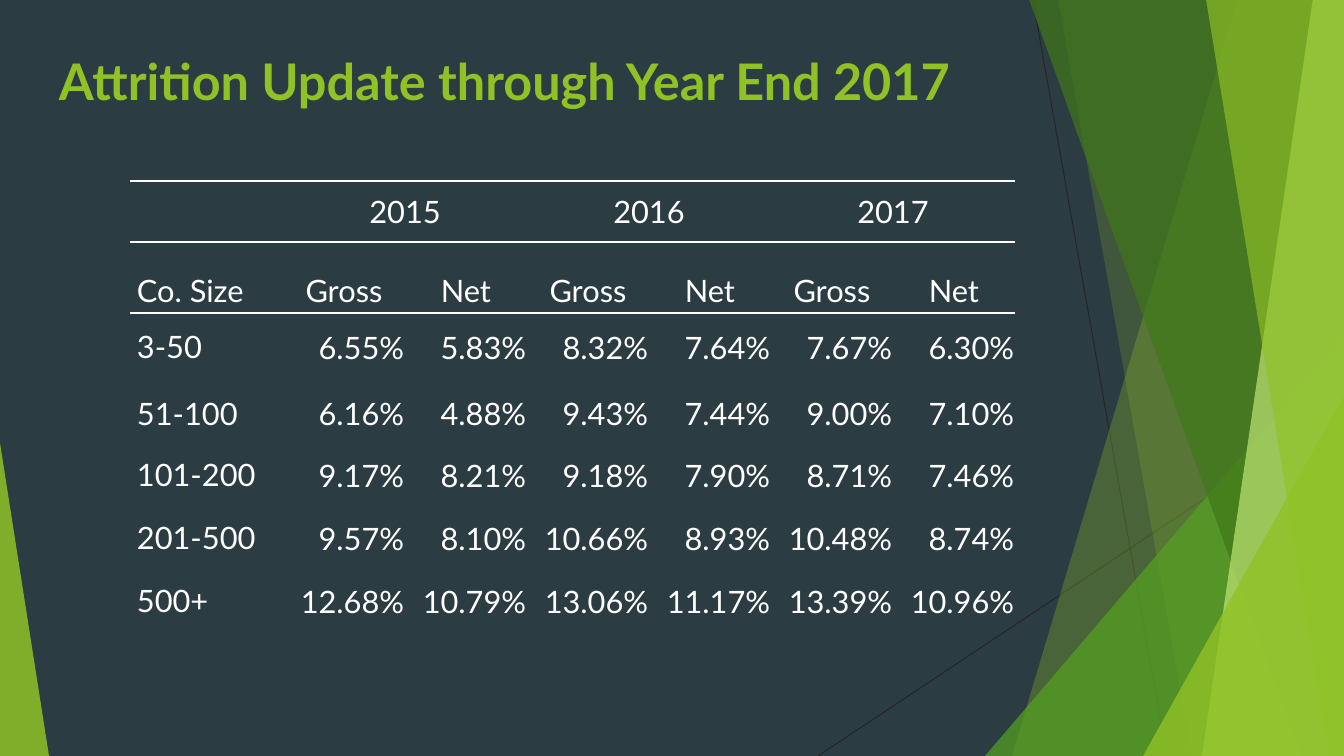
from dataclasses import dataclass

from lxml import etree
from pptx import Presentation
from pptx.dml.color import RGBColor
from pptx.enum.shapes import MSO_CONNECTOR, MSO_SHAPE
from pptx.enum.text import MSO_ANCHOR, PP_ALIGN
from pptx.oxml.ns import qn
from pptx.util import Pt

PX = 914400 / 100.8
WIDTH, HEIGHT = 1344, 756
LEFT, CENTER, RIGHT = PP_ALIGN.LEFT, PP_ALIGN.CENTER, PP_ALIGN.RIGHT
TOP, MIDDLE, BOTTOM = MSO_ANCHOR.TOP, MSO_ANCHOR.MIDDLE, MSO_ANCHOR.BOTTOM
TRIANGLE = MSO_SHAPE.ISOSCELES_TRIANGLE
STRAIGHT = MSO_CONNECTOR.STRAIGHT


@dataclass(frozen=True)
class Theme:
    background: str = "2C3C43"
    lime: str = "90C226"
    green: str = "54A021"
    forest: str = "3F7819"
    pale: str = "C0E474"
    hairline: str = "262626"
    white: str = "FFFFFF"
    font: str = "Lato"
    title_size: float = 36
    table_size: float = 22
    hairline_width: float = 0.75
    rule_width: float = 1


THEME = Theme()

RAYS = [((1033, 0), (1167, HEIGHT)), ((WIDTH, 406), (818, HEIGHT))]
# Facets, back to front: band = (top x, bottom x), triangle = (box, apex)
FACETS = [
    ("band", (1238, 1012), THEME.lime, 30),
    ("band", (1058, 1192), THEME.lime, 20),
    ("triangle", ((985, 336, 359, 420), 1), THEME.green, 72),
    ("band", (1029, 1301), THEME.forest, 70),
    ("band", (1313, 1202), THEME.pale, 70),
    ("band", (1206, 1329), THEME.lime, 65),
    ("triangle", ((1143, 396, 201, 360), 1), THEME.lime, 80),
    ("triangle", ((0, 443, 49, 313), 0), THEME.lime, 85),
]

YEARS = ["2015", "2016", "2017"]
ATTRITION = [
    ("3-50", "6.55%", "5.83%", "8.32%", "7.64%", "7.67%", "6.30%"),
    ("51-100", "6.16%", "4.88%", "9.43%", "7.44%", "9.00%", "7.10%"),
    ("101-200", "9.17%", "8.21%", "9.18%", "7.90%", "8.71%", "7.46%"),
    ("201-500", "9.57%", "8.10%", "10.66%", "8.93%", "10.48%", "8.74%"),
    ("500+", "12.68%", "10.79%", "13.06%", "11.17%", "13.39%", "10.96%"),
]
COL_WIDTHS = [153] + [122] * 6
ROW_HEIGHTS = [61, 71, 68, 65, 58, 68, 58]
RULED_EDGES = {0, 1, 2}
LABEL_INSETS = (7, 4, 7, 4)
FIGURE_INSETS = (1, 1, 1, 0)


def emu(px):
    return round(px * PX)


def set_attrs(obj, values):
    for name, value in values.items():
        setattr(obj, name, value)


class SlideBuilder:
    def __init__(self, prs, theme):
        self.theme = theme
        self.slide = prs.slides.add_slide(prs.slide_layouts[6])
        self.shapes = self.slide.shapes
        fill = self.slide.background.fill
        fill.solid()
        fill.fore_color.rgb = RGBColor.from_string(theme.background)

    def line(self, start, end):
        sp = self.shapes.add_connector(STRAIGHT, *map(emu, start + end))
        sp.line.width = Pt(self.theme.hairline_width)
        sp.line.color.rgb = RGBColor.from_string(self.theme.hairline)
        etree.SubElement(sp._element.spPr, qn("a:effectLst"))

    def paint(self, sp, color, opacity):
        """Fill with a colour at a percentage of opacity, without outline or shadow."""
        sp.shadow.inherit = False
        sp.line.fill.background()
        sp.fill.solid()
        sp.fill.fore_color.rgb = RGBColor.from_string(color)
        clr = sp._element.spPr.find(".//" + qn("a:srgbClr"))
        etree.SubElement(clr, qn("a:alpha"), val=str(opacity * 1000))

    def band(self, edge, color, opacity):
        """Draw from a slanted left edge to the right side of the slide."""
        top_x, bottom_x = edge
        builder = self.shapes.build_freeform(top_x, -1, scale=PX)
        builder.add_line_segments([(WIDTH, -1), (WIDTH, HEIGHT), (bottom_x, HEIGHT)])
        self.paint(builder.convert_to_shape(), color, opacity)

    def triangle(self, geometry, color, opacity):
        box, apex = geometry
        sp = self.shapes.add_shape(TRIANGLE, *map(emu, box))
        sp.adjustments[0] = apex
        self.paint(sp, color, opacity)

    def text(self, tf, words, size, color, align=LEFT, bold=False):
        p = tf.paragraphs[0]
        p.alignment = align
        r = p.add_run()
        r.text = words
        set_attrs(r.font, {"name": self.theme.font, "size": Pt(size), "bold": bold})
        r.font.color.rgb = RGBColor.from_string(color)

    def title(self, box, words):
        tf = self.shapes.add_textbox(*map(emu, box)).text_frame
        set_attrs(tf, {"word_wrap": True, "vertical_anchor": TOP})
        self.text(tf, words, self.theme.title_size, self.theme.lime, bold=True)

    def table(self, x, y, col_widths, row_heights):
        frame = self.shapes.add_table(
            len(row_heights), len(col_widths),
            *map(emu, (x, y, sum(col_widths), sum(row_heights))))
        table = frame.table
        set_attrs(table, {"first_row": False, "horz_banding": False})
        for col, width in zip(table.columns, col_widths):
            col.width = emu(width)
        for i, (row, height) in enumerate(zip(table.rows, row_heights)):
            row.height = emu(height)
            for cell in row.cells:
                cell.fill.background()
                self.borders(cell, i in RULED_EDGES, i + 1 in RULED_EDGES)
        return table

    def borders(self, cell, top, bottom):
        tc_pr = cell._tc.get_or_add_tcPr()
        sides = {"lnL": False, "lnR": False, "lnT": top, "lnB": bottom}
        for i, (side, ruled) in enumerate(sides.items()):
            ln = etree.Element(qn("a:" + side), w=str(Pt(self.theme.rule_width)))
            if ruled:
                fill = etree.SubElement(ln, qn("a:solidFill"))
                etree.SubElement(fill, qn("a:srgbClr"), val=self.theme.white)
            else:
                etree.SubElement(ln, qn("a:noFill"))
            tc_pr.insert(i, ln)

    def cell(self, cell, words, align=LEFT, anchor=MIDDLE, insets=LABEL_INSETS):
        sides = ("margin_left", "margin_top", "margin_right", "margin_bottom")
        set_attrs(cell, dict(zip(sides, map(emu, insets))))
        cell.vertical_anchor = anchor
        self.text(cell.text_frame, words, self.theme.table_size, self.theme.white, align)


def add_attrition_table(s):
    table = s.table(130, 181, COL_WIDTHS, ROW_HEIGHTS)
    for i, year in enumerate(YEARS):
        first = table.cell(0, 1 + 2 * i)
        first.merge(table.cell(0, 2 + 2 * i))
        s.cell(first, year, CENTER)
    for col, heading in enumerate(["Co. Size"] + ["Gross", "Net"] * len(YEARS)):
        s.cell(table.cell(1, col), heading, CENTER if col else LEFT, BOTTOM)
    for row, (size, *rates) in enumerate(ATTRITION, start=2):
        s.cell(table.cell(row, 0), size)
        for col, rate in enumerate(rates, start=1):
            s.cell(table.cell(row, col), rate, RIGHT, insets=FIGURE_INSETS)


def main():
    prs = Presentation()
    set_attrs(prs, {"slide_width": emu(WIDTH), "slide_height": emu(HEIGHT)})
    s = SlideBuilder(prs, THEME)
    for start, end in RAYS:
        s.line(start, end)
    draw = {"band": s.band, "triangle": s.triangle}
    for kind, geometry, color, opacity in FACETS:
        draw[kind](geometry, color, opacity)
    s.title((49, 45, 1012, 106), "Attrition Update through Year End 2017")
    add_attrition_table(s)
    prs.save("out.pptx")


if __name__ == "__main__":
    main()
